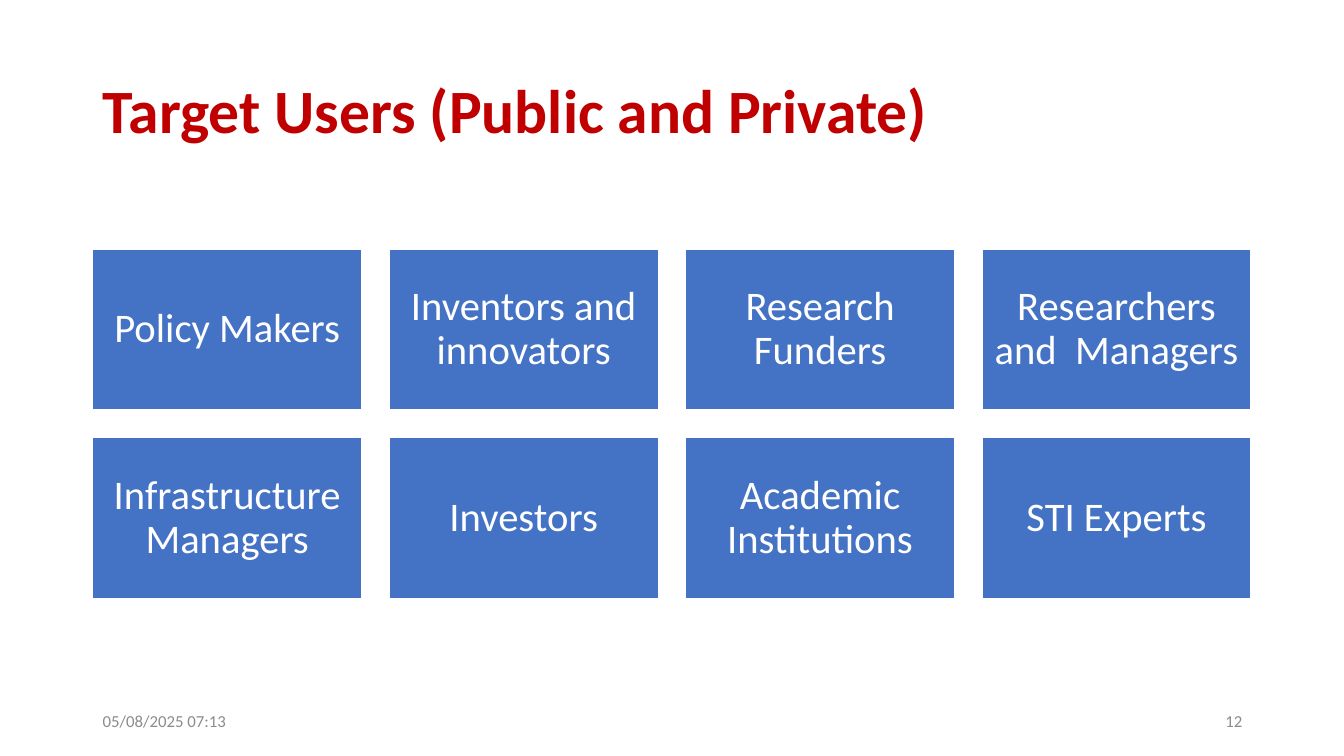
from dataclasses import dataclass

from pptx import Presentation
from pptx.dml.color import RGBColor
from pptx.enum.shapes import MSO_SHAPE
from pptx.enum.text import MSO_ANCHOR, MSO_AUTO_SIZE, PP_ALIGN
from pptx.util import Inches, Pt

RECTANGLE = MSO_SHAPE.RECTANGLE
MIDDLE = MSO_ANCHOR.MIDDLE
NO_AUTOFIT = MSO_AUTO_SIZE.NONE
LEFT, CENTER, RIGHT = PP_ALIGN.LEFT, PP_ALIGN.CENTER, PP_ALIGN.RIGHT
TITLE_ONLY = 5


@dataclass(frozen=True)
class Theme:
    font: str = "Calibri"
    title_color: RGBColor = RGBColor(0xC0, 0x00, 0x00)
    card_color: RGBColor = RGBColor(0x44, 0x72, 0xC4)
    white: RGBColor = RGBColor(0xFF, 0xFF, 0xFF)
    footer_color: RGBColor = RGBColor(0x8C, 0x8C, 0x8C)
    title_size: int = 44
    card_size: int = 29
    footer_size: int = 12


THEME = Theme()

TARGET_USERS = [
    "Policy Makers", "Inventors and innovators",
    "Research Funders", "Researchers and  Managers",
    "Infrastructure Managers", "Investors",
    "Academic Institutions", "STI Experts",
]
COLUMNS = 4
GRID_LEFT, GRID_TOP = 0.92, 2.47
CARD_WIDTH, CARD_HEIGHT = 2.67, 1.6
GAP = 0.27
CARD_INSET = 0.11


def write_text(shape, text, size, color, alignment, bold=False, line_spacing=1.0):
    frame = shape.text_frame
    frame.word_wrap = True
    frame.auto_size = NO_AUTOFIT
    frame.vertical_anchor = MIDDLE
    paragraph = frame.paragraphs[0]
    paragraph.alignment = alignment
    paragraph.line_spacing = line_spacing
    run = paragraph.add_run()
    run.text = text
    run.font.name = THEME.font
    run.font.size = Pt(size)
    run.font.bold = bold
    run.font.color.rgb = color


def set_title(slide, text):
    title = slide.shapes.title
    title.left, title.top = Inches(0.92), Inches(0.4)
    title.width, title.height = Inches(11.5), Inches(1.45)
    write_text(title, text, THEME.title_size, THEME.title_color, LEFT,
               bold=True, line_spacing=0.9)


def add_card(slide, left, top, text):
    card = slide.shapes.add_shape(
        RECTANGLE, Inches(left), Inches(top),
        Inches(CARD_WIDTH), Inches(CARD_HEIGHT))
    card.shadow.inherit = False
    card.fill.solid()
    card.fill.fore_color.rgb = THEME.card_color
    card.line.color.rgb = THEME.white
    card.line.width = Pt(1)
    frame = card.text_frame
    frame.margin_left = frame.margin_right = Inches(CARD_INSET)
    frame.margin_top = frame.margin_bottom = Inches(CARD_INSET)
    write_text(card, text, THEME.card_size, THEME.white, CENTER, line_spacing=0.9)


def add_footer(slide, left, text, alignment):
    footer = slide.shapes.add_textbox(
        Inches(left), Inches(6.95), Inches(3), Inches(0.4))
    write_text(footer, text, THEME.footer_size, THEME.footer_color, alignment)


def main():
    presentation = Presentation()
    presentation.slide_width = Inches(13.33)
    presentation.slide_height = Inches(7.5)
    slide = presentation.slides.add_slide(presentation.slide_layouts[TITLE_ONLY])

    set_title(slide, "Target Users (Public and Private)")
    for index, user in enumerate(TARGET_USERS):
        row, column = divmod(index, COLUMNS)
        add_card(slide, GRID_LEFT + column * (CARD_WIDTH + GAP),
                 GRID_TOP + row * (CARD_HEIGHT + GAP), user)
    add_footer(slide, 0.92, "05/08/2025 07:13", LEFT)
    add_footer(slide, 9.42, "12", RIGHT)

    presentation.save("out.pptx")


if __name__ == "__main__":
    main()
